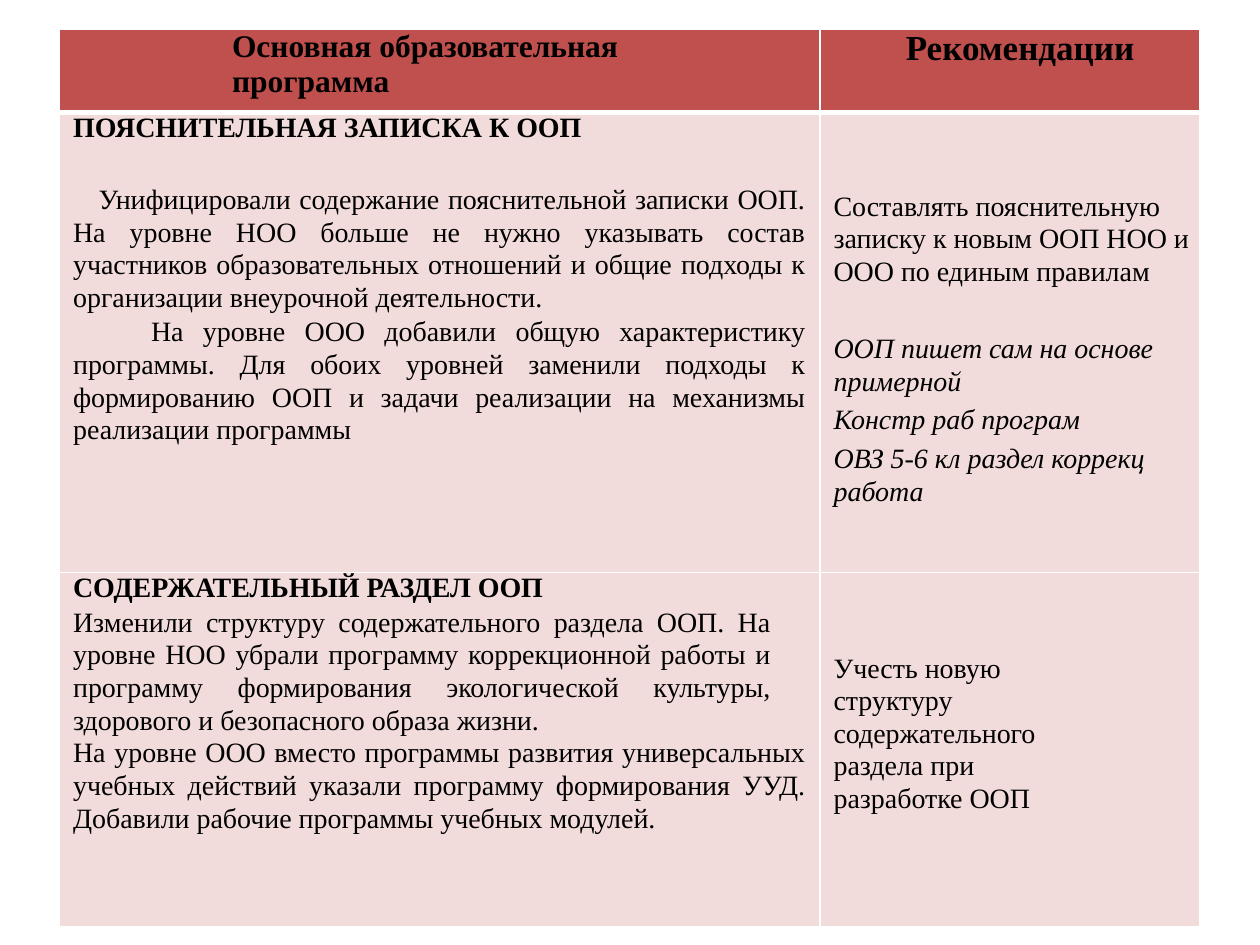
from dataclasses import dataclass

from lxml import etree
from pptx import Presentation
from pptx import util as u
from pptx.dml.color import RGBColor
from pptx.enum import text
from pptx.oxml import ns

COLORS = {"header": "C0504D", "body": "F2DCDB", "border": "FFFFFF", "ink": "000000"}
FONT = "Times New Roman"
LEFT = text.PP_ALIGN.LEFT
JUSTIFY = text.PP_ALIGN.JUSTIFY


@dataclass
class Para:
    words: str
    size: float = 16
    bold: bool = False
    italic: bool = False
    align: text.PP_ALIGN = LEFT
    left: float = 7.8
    right: float = 0
    first_line: float = 0
    before: float = 3.5
    line: float = 1.05


@dataclass
class Cell:
    paras: list[Para]
    fill: str = "body"
    top: float = 0


def heading(words: str, **options) -> Para:
    return Para(words, bold=True, line=1, **options)


def justified(words: str, right: float = 8.2, before: float = 1, **options) -> Para:
    return Para(words, align=JUSTIFY, right=right, before=before, **options)


# Content, row by row
ROWS = [
    [
        Cell([heading("Основная образовательная программа", size=18, left=98.6, right=80)],
             fill="header"),
        Cell([heading("Рекомендации", size=20, left=49)], fill="header"),
    ],
    [
        Cell([
            heading("ПОЯСНИТЕЛЬНАЯ ЗАПИСКА К ООП"),
            justified("Унифицировали содержание пояснительной записки ООП. На уровне НОО "
                      "больше не нужно указывать состав участников образовательных отношений "
                      "и общие подходы к организации внеурочной деятельности.",
                      first_line=14.5, before=22.5),
            justified("На уровне ООО добавили общую характеристику программы. Для обоих "
                      "уровней заменили подходы к формированию ООП и задачи реализации на "
                      "механизмы реализации программы", first_line=44.5),
        ]),
        Cell([
            Para("Составлять пояснительную записку к новым ООП НОО и ООО по единым правилам"),
            Para("ООП пишет сам на основе примерной", italic=True, before=25.5),
            Para("Констр раб програм", italic=True),
            Para("ОВЗ 5-6 кл раздел коррекц работа", italic=True),
        ], top=44),
    ],
    [
        Cell([
            heading("СОДЕРЖАТЕЛЬНЫЙ РАЗДЕЛ ООП"),
            justified("Изменили структуру содержательного раздела ООП. На уровне НОО убрали "
                      "программу коррекционной работы и программу формирования экологической "
                      "культуры, здорового и безопасного образа жизни.", right=28),
            justified("На уровне ООО вместо программы развития универсальных учебных действий "
                      "указали программу формирования УУД. Добавили рабочие программы учебных "
                      "модулей.", before=0.1),
        ]),
        Cell([Para("Учесть новую структуру содержательного раздела при разработке ООП",
                   right=74)], top=45),
    ],
]
COLUMN_WIDTHS = [434.6, 217.2]
ROW_HEIGHTS = [47.5, 263, 202.5]


def set_borders(cell, bottom: float) -> None:
    properties = cell._tc.get_or_add_tcPr()
    for side, width in (("L", 1), ("R", 1), ("T", 1), ("B", bottom)):
        line = etree.SubElement(properties, ns.qn(f"a:ln{side}"), w=str(u.Pt(width)))
        fill = etree.SubElement(line, ns.qn("a:solidFill"))
        etree.SubElement(fill, ns.qn("a:srgbClr"), val=COLORS["border"])


def write_paragraph(paragraph, content: Para) -> None:
    paragraph.text = content.words
    paragraph.alignment = content.align
    paragraph.space_before = u.Pt(content.before)
    paragraph.line_spacing = content.line
    font = paragraph.font
    font.name, font.size = FONT, u.Pt(content.size)
    font.bold, font.italic = content.bold, content.italic
    font.color.rgb = RGBColor.from_string(COLORS["ink"])
    # Indents
    properties = paragraph._p.get_or_add_pPr()
    for name, length in (("marL", content.left), ("marR", content.right),
                         ("indent", content.first_line)):
        properties.set(name, str(u.Pt(length)))


def draw_cell(cell, content: Cell) -> None:
    cell.margin_left = cell.margin_right = cell.margin_bottom = u.Pt(0)
    cell.margin_top = u.Pt(content.top)
    set_borders(cell, bottom=3 if content.fill == "header" else 1)
    cell.fill.solid()
    cell.fill.fore_color.rgb = RGBColor.from_string(COLORS[content.fill])
    frame = cell.text_frame
    for index, para in enumerate(content.paras):
        paragraph = frame.add_paragraph() if index else frame.paragraphs[0]
        write_paragraph(paragraph, para)


def main() -> None:
    deck = Presentation()
    deck.slide_width, deck.slide_height = u.Pt(720), u.Pt(540)
    slide = deck.slides.add_slide(deck.slide_layouts[6])

    # Programme and recommendations table
    programme = slide.shapes.add_table(
        len(ROW_HEIGHTS), len(COLUMN_WIDTHS), u.Pt(34), u.Pt(16.8),
        u.Pt(sum(COLUMN_WIDTHS)), u.Pt(sum(ROW_HEIGHTS))).table
    for column, width in zip(programme.columns, COLUMN_WIDTHS):
        column.width = u.Pt(width)
    for row, height, contents in zip(programme.rows, ROW_HEIGHTS, ROWS):
        row.height = u.Pt(height)
        for cell, content in zip(row.cells, contents):
            draw_cell(cell, content)

    deck.save("out.pptx")


if __name__ == "__main__":
    main()
